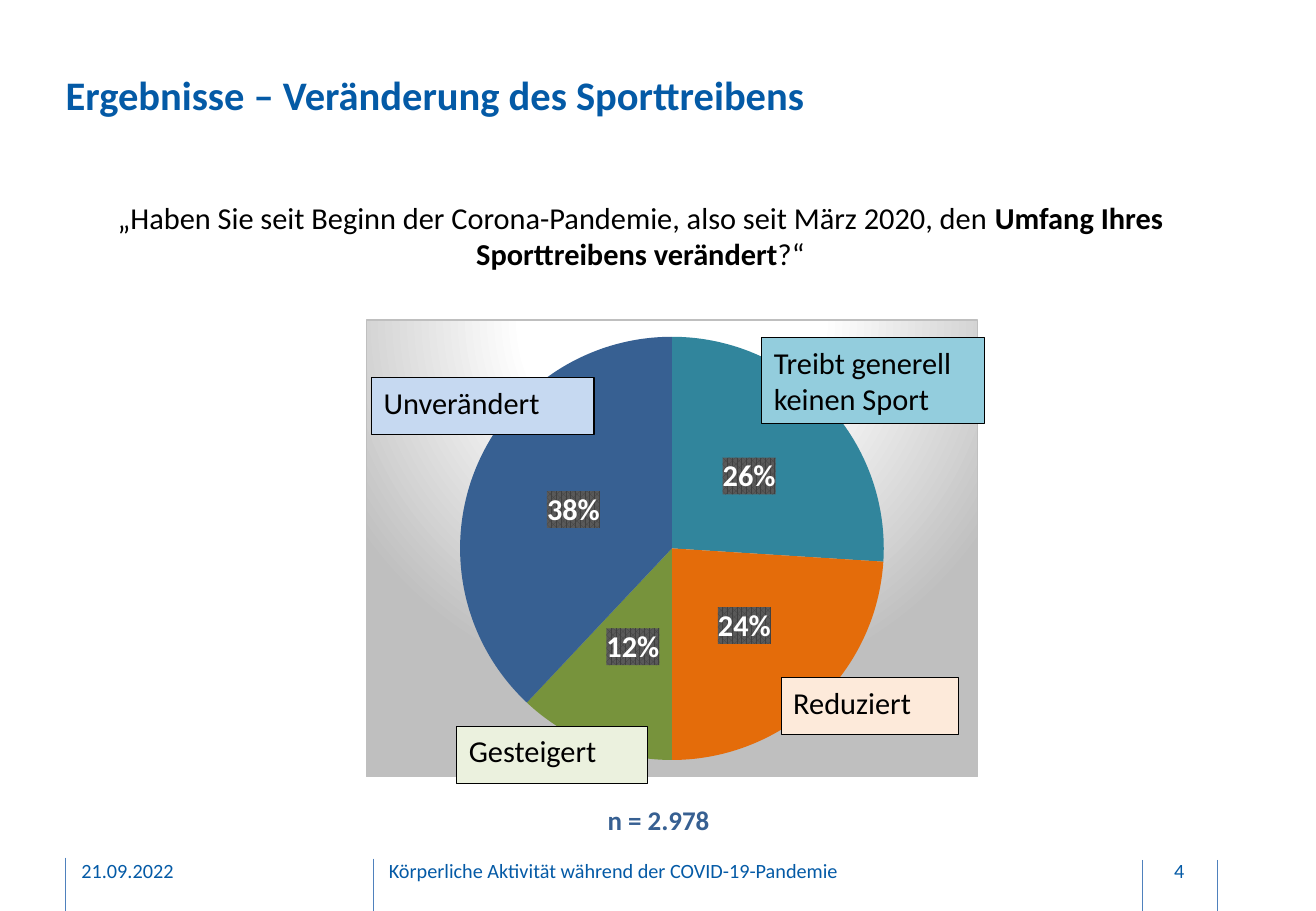
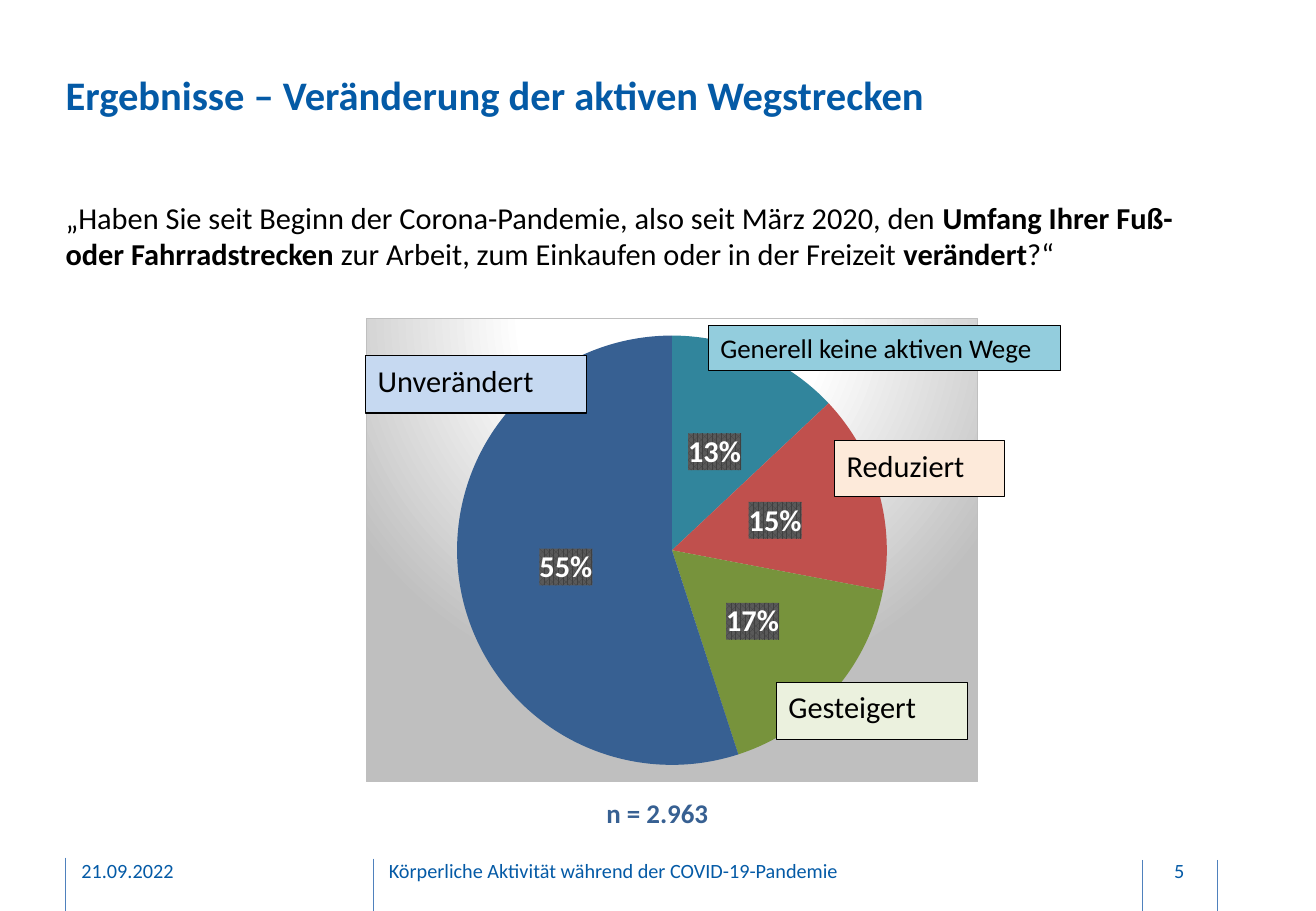
import pptx
import pptx.util
import pptx.dml.color
import pptx.enum.text
import pptx.enum.shapes
import pptx.enum.chart
import pptx.chart.data
import pptx.oxml
import pptx.oxml.ns
from lxml import etree

Inches = pptx.util.Inches
Pt = pptx.util.Pt
RGBColor = pptx.dml.color.RGBColor
ALIGN = pptx.enum.text.PP_ALIGN
ANCHOR = pptx.enum.text.MSO_ANCHOR

FONT = "Calibri"
BLUE = RGBColor(0x04, 0x5A, 0xA6)
RULE = RGBColor(0x4F, 0x81, 0xBD)
BLACK = RGBColor(0x00, 0x00, 0x00)
WHITE = RGBColor(0xFF, 0xFF, 0xFF)
TEAL = RGBColor(0x31, 0x85, 0x9C)
ORANGE = RGBColor(0xE4, 0x6C, 0x0A)
RED = RGBColor(0xC0, 0x50, 0x4D)
GREEN = RGBColor(0x77, 0x93, 0x3C)
NAVY = RGBColor(0x37, 0x60, 0x92)
PALE_TEAL = RGBColor(0x93, 0xCD, 0xDD)
PALE_ORANGE = RGBColor(0xFD, 0xEA, 0xDA)
PALE_GREEN = RGBColor(0xEB, 0xF1, 0xDE)
PALE_BLUE = RGBColor(0xC6, 0xD9, 0xF1)

DATE = "21.09.2022"
FOOTER = "Körperliche Aktivität während der COVID-19-Pandemie"
FOOTER_RULES = [(0.54, 7.06), (3.07, 7.07), (9.4, 7.08), (10.02, 7.08)]
QUESTION = "„Haben Sie seit Beginn der Corona-Pandemie, also seit März 2020, den "

SLIDES = [
    {
        "number": "4",
        "title": "Ergebnisse – Veränderung des Sporttreibens",
        "question": [(QUESTION, False), ("Umfang Ihres Sporttreibens verändert", True),
                     ("?“", False)],
        "align": ALIGN.CENTER,
        "chart_at": (3.01, 2.63, 5.04, 3.77),
        "values": (26, 24, 12, 38),
        "colors": (TEAL, ORANGE, GREEN, NAVY),
        "labels": [
            ("Treibt generell keinen Sport", (6.27, 2.78, 1.83, 0.71), PALE_TEAL, 18),
            ("Reduziert", (6.43, 5.58, 1.46, 0.47), PALE_ORANGE, 18),
            ("Gesteigert", (3.76, 5.98, 1.57, 0.47), PALE_GREEN, 18),
            ("Unverändert", (3.06, 3.11, 1.83, 0.47), PALE_BLUE, 18),
        ],
        "sample": "n = 2.978",
        "sample_at": (3.97, 6.57, 2.9, 0.37),
    },
    {
        "number": "5",
        "title": "Ergebnisse – Veränderung der aktiven Wegstrecken",
        "question": [(QUESTION, False), ("Umfang Ihrer Fuß- oder Fahrradstrecken ", True),
                     ("zur Arbeit, zum Einkaufen oder in der Freizeit", False),
                     (" verändert", True), ("?“", False)],
        "align": ALIGN.LEFT,
        "chart_at": (3.01, 2.62, 5.04, 3.82),
        "values": (13, 15, 17, 55),
        "colors": (TEAL, RED, GREEN, NAVY),
        "labels": [
            ("Unverändert", (3.01, 2.93, 1.82, 0.47), PALE_BLUE, 18),
            ("Gesteigert", (6.39, 5.62, 1.57, 0.47), PALE_GREEN, 18),
            ("Reduziert", (6.87, 3.63, 1.4, 0.46), PALE_ORANGE, 18),
            ("Generell keine aktiven Wege", (5.83, 2.68, 2.9, 0.37), PALE_TEAL, 16),
        ],
        "sample": "n = 2.963",
        "sample_at": (3.96, 6.51, 2.9, 0.37),
    },
]

CHART_BACKGROUND = """<c:spPr %s>
<a:gradFill><a:gsLst>
<a:gs pos="0"><a:srgbClr val="FFFFFF"/></a:gs>
<a:gs pos="39000"><a:srgbClr val="FFFFFF"/></a:gs>
<a:gs pos="100000"><a:srgbClr val="BFBFBF"/></a:gs>
</a:gsLst><a:path path="circle">
<a:fillToRect l="50000" t="-80000" r="50000" b="180000"/></a:path></a:gradFill>
<a:ln w="9525"><a:solidFill><a:srgbClr val="BFBFBF"/></a:solidFill></a:ln>
</c:spPr>""" % pptx.oxml.ns.nsdecls("c", "a")

LABEL_BACKGROUND = """<c:spPr %s><a:pattFill prst="pct75">
<a:fgClr><a:srgbClr val="404040"/></a:fgClr>
<a:bgClr><a:srgbClr val="595959"/></a:bgClr>
</a:pattFill><a:ln><a:noFill/></a:ln></c:spPr>""" % pptx.oxml.ns.nsdecls("c", "a")


def set_font(font, size, color, bold=False):
    font.name = FONT
    font.size = Pt(size)
    font.bold = bold
    font.color.rgb = color


def fill_text(sp, runs, size, color, align=ALIGN.LEFT, anchor=ANCHOR.TOP, insets=(0.1, 0.05)):
    tf = sp.text_frame
    tf.word_wrap = True
    tf.vertical_anchor = anchor
    tf.margin_left = tf.margin_right = Inches(insets[0])
    tf.margin_top = tf.margin_bottom = Inches(insets[1])
    p = tf.paragraphs[0]
    p.alignment = align
    for text, bold in runs:
        r = p.add_run()
        r.text = text
        set_font(r.font, size, color, bold)


def add_text(s, at, runs, size, color, **layout):
    sp = s.shapes.add_textbox(*map(Inches, at))
    fill_text(sp, runs, size, color, **layout)


def add_footer(s, number):
    for x, top in FOOTER_RULES:
        line = s.shapes.add_connector(pptx.enum.shapes.MSO_CONNECTOR.STRAIGHT,
                                      Inches(x), Inches(top), Inches(x), Inches(7.5))
        line.line.color.rgb = RULE
        line.line.width = Pt(0.5)
        etree.SubElement(line._element.spPr, pptx.oxml.ns.qn("a:effectLst"))
    for text, x, width, align in [(DATE, 0.67, 2.2, ALIGN.LEFT),
                                  (FOOTER, 3.2, 5.29, ALIGN.LEFT),
                                  (number, 9.41, 0.59, ALIGN.CENTER)]:
        add_text(s, (x, 6.97, width, 0.4), [(text, False)], 12, BLUE,
                 align=align, anchor=ANCHOR.MIDDLE, insets=(0, 0.05))


def add_pie(s, at, values, colors):
    data = pptx.chart.data.CategoryChartData()
    data.categories = [str(i + 1) for i in range(len(values))]
    data.add_series("Series 1", values)
    chart = s.shapes.add_chart(pptx.enum.chart.XL_CHART_TYPE.PIE,
                               *map(Inches, at), data).chart
    chart.has_title = False
    chart.has_legend = False
    set_font(chart.font, 10, BLACK)
    chart._chartSpace.chart.addnext(pptx.oxml.parse_xml(CHART_BACKGROUND))
    plot = chart.plots[0]
    plot.vary_by_categories = True
    series = plot.series[0]
    for i, color in enumerate(colors):
        fill = series.points[i].format.fill
        fill.solid()
        fill.fore_color.rgb = color
    labels = series.data_labels
    labels.show_value = False
    labels.show_percentage = True
    labels.number_format = "0%"
    labels.number_format_is_linked = False
    labels.position = pptx.enum.chart.XL_LABEL_POSITION.CENTER
    set_font(labels.font, 18, WHITE, True)
    labels._element.find(pptx.oxml.ns.qn("c:numFmt")).addnext(
        pptx.oxml.parse_xml(LABEL_BACKGROUND))


def add_label(s, text, at, color, size):
    sp = s.shapes.add_shape(pptx.enum.shapes.MSO_SHAPE.RECTANGLE, *map(Inches, at))
    sp.shadow.inherit = False
    sp.fill.solid()
    sp.fill.fore_color.rgb = color
    sp.line.color.rgb = BLACK
    sp.line.width = Pt(0.75)
    fill_text(sp, [(text, False)], size, BLACK)


def main():
    prs = pptx.Presentation()
    prs.slide_width = Inches(10.83)
    prs.slide_height = Inches(7.5)
    for content in SLIDES:
        s = prs.slides.add_slide(prs.slide_layouts[6])
        add_footer(s, content["number"])
        add_text(s, (0.54, 0.58, 9.46, 0.51), [(content["title"], True)], 24, BLUE,
                 insets=(0, 0))
        add_text(s, (0.54, 1.64, 9.46, 0.7), content["question"], 18, BLACK,
                 align=content["align"], insets=(0, 0))
        add_pie(s, content["chart_at"], content["values"], content["colors"])
        for label in content["labels"]:
            add_label(s, *label)
        add_text(s, content["sample_at"], [(content["sample"], True)], 16, NAVY,
                 align=ALIGN.CENTER)
    prs.save("out.pptx")


if __name__ == "__main__":
    main()
